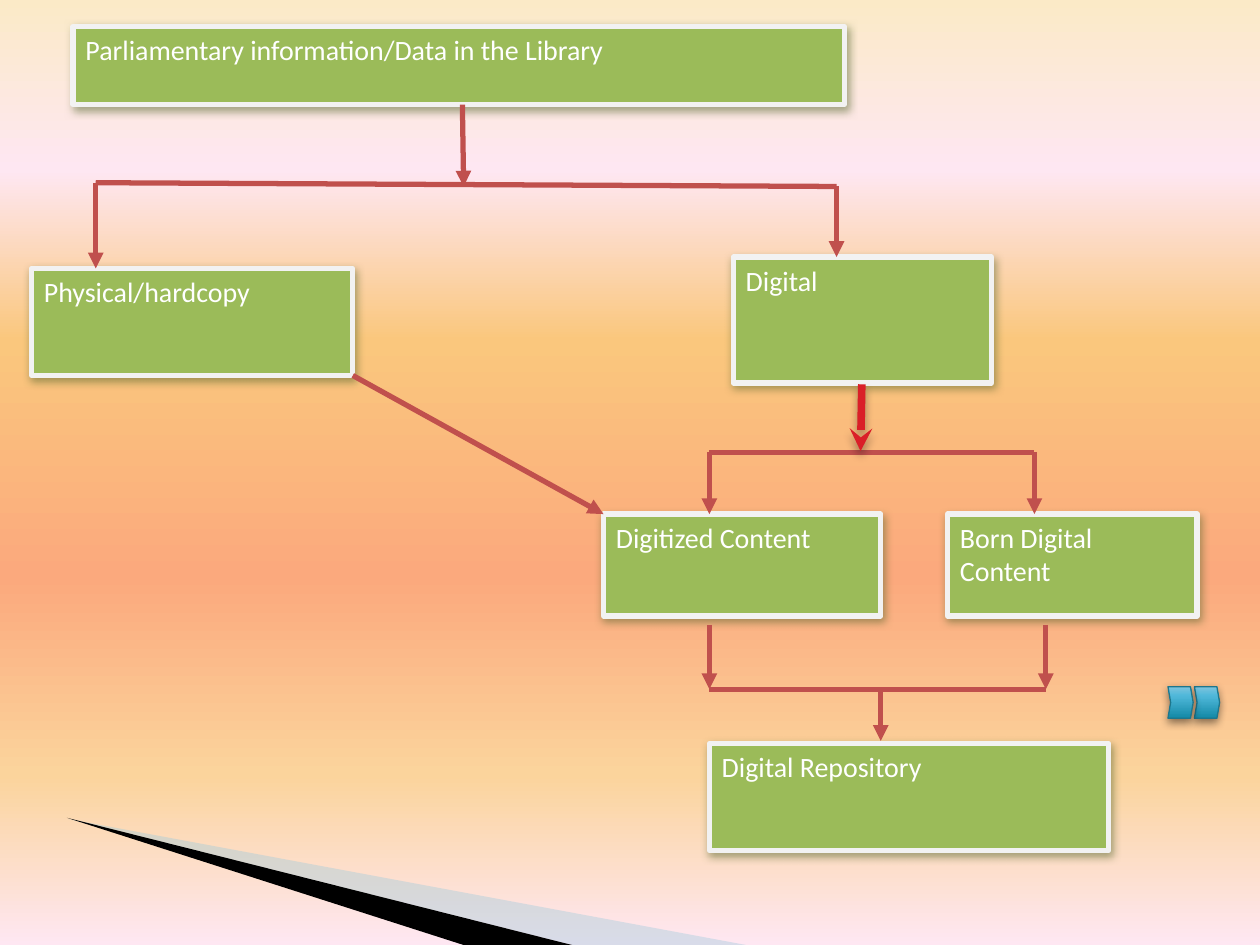
"""Build the parliamentary library information flow slide."""
from lxml import etree
from pptx import Presentation
from pptx.dml.color import RGBColor
from pptx.enum.shapes import MSO_CONNECTOR, MSO_SHAPE
from pptx.enum.text import MSO_ANCHOR, PP_ALIGN
from pptx.oxml.ns import qn
from pptx.util import Inches, Pt

STRAIGHT = MSO_CONNECTOR.STRAIGHT
RECTANGLE, CHEVRON = MSO_SHAPE.RECTANGLE, MSO_SHAPE.CHEVRON
TOP, LEFT = MSO_ANCHOR.TOP, PP_ALIGN.LEFT

THEME = {
    "font": "Calibri", "size": 16, "text": "FFFFFF",
    "box": "9BBB59", "border": "F2F2F2", "border_width": 3,
    "arrow": "C0504D", "arrow_width": 3,
    "accent": "DA1F28", "accent_width": 4.33,
    "chevron_line": "1E768C", "chevron_width": 0.75,
    "background": [(0, "FBEAC7"), (18, "FEE7F2"), (36, "FAC77D"),
                   (61, "FBA97D"), (82, "FBD49C"), (100, "FEE7F2")],
    "chevron": [(0, "1389A6"), (72, "50B8DA"), (100, "7FC4DD")],
    "box_shadow": ("4E6128", 50, 5, 2.2, 63),
    "chevron_shadow": ("000000", 46, 5, 2, 90),
    "accent_shadow": ("000000", 35, 5, 3, 90),
}

BOXES = [
    ("Parliamentary information/Data in the Library", 0.58, 0.21, 6.12, 0.62),
    ("Physical/hardcopy", 0.25, 2.13, 2.55, 0.85),
    ("Digital", 5.82, 2.04, 2.05, 1),
    ("Digitized Content", 4.79, 4.08, 2.2, 0.81),
    ("Born Digital Content", 7.52, 4.08, 1.98, 0.81),
    ("Digital Repository", 5.63, 5.9, 3.17, 0.85),
]
ARROWS = [
    ((3.67, 0.83), (3.68, 1.48)),
    ((0.76, 1.45), (0.76, 2.13)),
    ((6.64, 1.48), (6.64, 2.04)),
    ((2.8, 2.98), (4.79, 4.08)),
    ((5.63, 3.59), (5.63, 4.08)),
    ((8.21, 3.59), (8.21, 4.08)),
    ((5.63, 4.96), (5.63, 5.47)),
    ((8.3, 4.96), (8.3, 5.47)),
    ((6.99, 5.47), (6.99, 5.88)),
]
BRANCHES = [
    ((0.76, 1.45), (6.64, 1.48)),
    ((5.63, 3.59), (8.21, 3.59)),
    ((5.63, 5.47), (8.3, 5.47)),
]
ACCENT_ARROW = ((6.84, 3.05), (6.83, 3.58))
WEDGES = [
    ("9FCBDC", 40, [(0.54, 6.5), (5.92, 7.5), (4.54, 7.5)]),
    ("000000", 100, [(0.53, 6.49), (4.54, 7.5), (3.68, 7.5)]),
]
CHEVRON_LEFTS = (9.48, 9.27)


def add_child(parent, tag, **attributes):
    child = etree.SubElement(parent, qn(tag))
    for name, value in attributes.items():
        child.set(name, str(value))
    return child


def set_gradient(fill, element, stops, angle):
    fill.gradient()
    fill.gradient_angle = angle
    stop_list = element.find(".//" + qn("a:gsLst"))
    for stop in list(stop_list):
        stop_list.remove(stop)
    for position, color in stops:
        stop = add_child(stop_list, "a:gs", pos=position * 1000)
        add_child(stop, "a:srgbClr", val=color)


def add_shadow(effects, color, alpha, blur, distance, angle):
    shadow = add_child(effects, "a:outerShdw", blurRad=Pt(blur), dist=Pt(distance),
                       dir=angle * 60000, algn="ctr", rotWithShape=0)
    add_child(add_child(shadow, "a:srgbClr", val=color), "a:alpha", val=alpha * 1000)


def set_line(line, color, width):
    line.color.rgb = RGBColor.from_string(color)
    line.width = Pt(width)


def add_preset(slide, preset, bounds, line_color, line_width, shadow):
    shape = slide.shapes.add_shape(preset, *map(Inches, bounds))
    set_line(shape.line, line_color, line_width)
    shape.shadow.inherit = False
    add_shadow(shape.element.spPr.find(qn("a:effectLst")), *shadow)
    return shape


def add_box(slide, text, *bounds):
    shape = add_preset(slide, RECTANGLE, bounds, THEME["border"],
                       THEME["border_width"], THEME["box_shadow"])
    shape.fill.solid()
    shape.fill.fore_color.rgb = RGBColor.from_string(THEME["box"])
    frame = shape.text_frame
    frame.text = text
    frame.word_wrap = True
    frame.vertical_anchor = TOP
    paragraph = frame.paragraphs[0]
    paragraph.alignment = LEFT
    font = paragraph.runs[0].font
    font.name, font.size = THEME["font"], Pt(THEME["size"])
    font.color.rgb = RGBColor.from_string(THEME["text"])


def add_chevron(slide, left):
    shape = add_preset(slide, CHEVRON, (left, 5.45, 0.2, 0.25), THEME["chevron_line"],
                       THEME["chevron_width"], THEME["chevron_shadow"])
    shape.adjustments[0] = 0.108
    set_gradient(shape.fill, shape.element, THEME["chevron"], 90)


def add_wedge(slide, color, alpha, points):
    corners = [(Inches(x), Inches(y)) for x, y in points]
    builder = slide.shapes.build_freeform(*corners[0])
    builder.add_line_segments(corners[1:])
    shape = builder.convert_to_shape()
    shape.fill.solid()
    shape.fill.fore_color.rgb = RGBColor.from_string(color)
    color_element = shape.element.spPr.find(qn("a:solidFill"))[0]
    add_child(color_element, "a:alpha", val=alpha * 1000)
    shape.line.fill.background()
    shape.shadow.inherit = False


def add_line(slide, start, end, style="arrow", head=None, shadow=None):
    connector = slide.shapes.add_connector(STRAIGHT, *map(Inches, start + end))
    set_line(connector.line, THEME[style], THEME[style + "_width"])
    properties = connector.element.spPr
    if head:
        add_child(properties.find(qn("a:ln")), "a:tailEnd", type=head)
    effects = add_child(properties, "a:effectLst")
    if shadow:
        add_shadow(effects, *shadow)


def main():
    presentation = Presentation()
    presentation.slide_width, presentation.slide_height = Inches(10), Inches(7.5)
    slide = presentation.slides.add_slide(presentation.slide_layouts[6])
    set_gradient(slide.background.fill, slide.element, THEME["background"], 270)
    for wedge in WEDGES:
        add_wedge(slide, *wedge)
    for left in CHEVRON_LEFTS:
        add_chevron(slide, left)
    for box in BOXES:
        add_box(slide, *box)
    for start, end in ARROWS:
        add_line(slide, start, end, head="triangle")
    for start, end in BRANCHES:
        add_line(slide, start, end)
    add_line(slide, *ACCENT_ARROW, style="accent", head="stealth",
             shadow=THEME["accent_shadow"])
    presentation.save("out.pptx")


if __name__ == "__main__":
    main()
